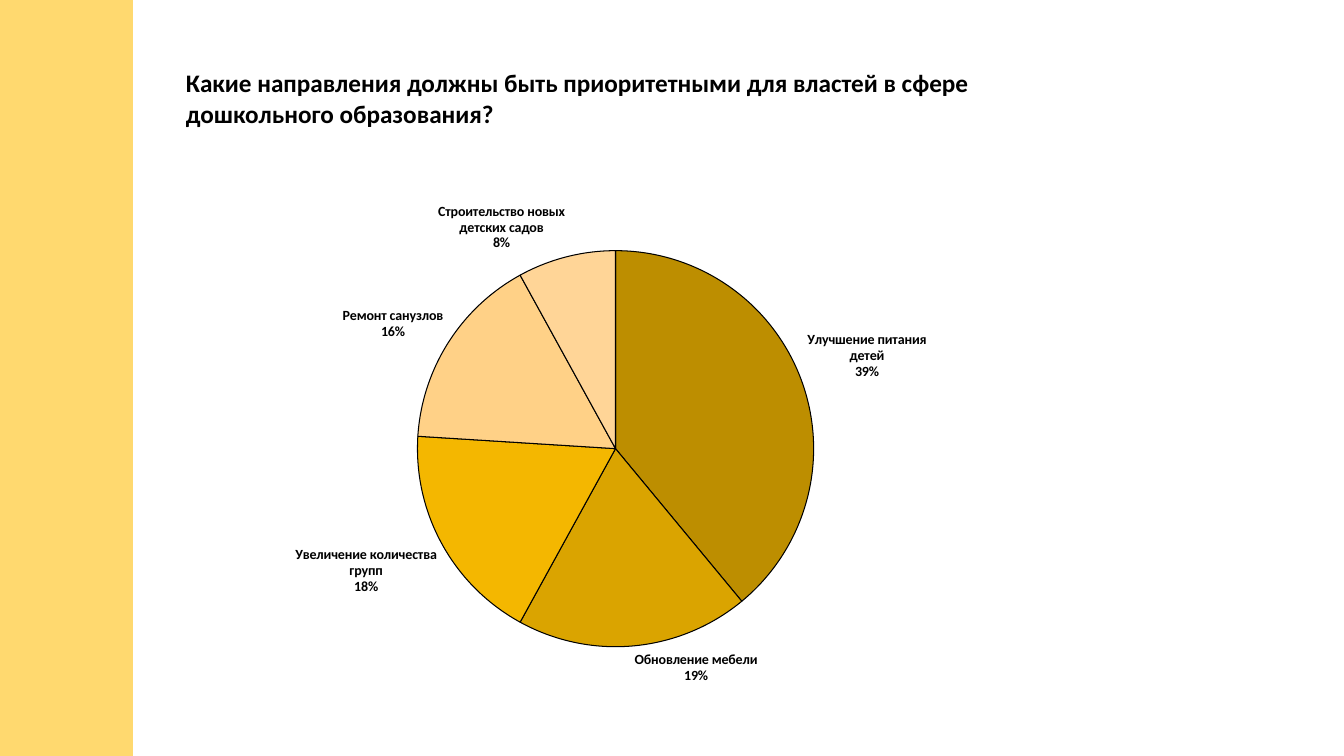
from dataclasses import dataclass

from lxml import etree
from pptx import Presentation
from pptx import util as u
from pptx.chart.data import CategoryChartData
from pptx.dml.color import RGBColor
from pptx.enum import chart as ch, shapes, text
from pptx.oxml import ns

W, H = 13.33, 7.5
FONT = "Calibri"
COLORS = {
    "band": "FFD96F",
    "ink": "000000",
    "food": "BD8E00",
    "furniture": "DAA400",
    "groups": "F4B700",
    "repair": "FFD187",
    "building": "FFD597",
}


@dataclass(frozen=True)
class Box:
    x: float
    y: float
    w: float
    h: float

    def emu(self) -> tuple:
        return (u.Inches(self.x * W), u.Inches(self.y * H),
                u.Inches(self.w * W), u.Inches(self.h * H))


@dataclass(frozen=True)
class Slice:
    label: str
    percent: int
    color: str


BAND = Box(0, 0, 0.099, 1)
TITLE = Box(0.131, 0.083, 0.688, 0.095)
CHART = Box(0.166, 0.247, 0.55, 0.675)
PIE = {"x": 0.263, "y": 0.125, "w": 0.536, "h": 0.777}
SLICES = [
    Slice("Улучшение питания детей", 39, "food"),
    Slice("Обновление мебели", 19, "furniture"),
    Slice("Увеличение количества групп", 18, "groups"),
    Slice("Ремонт санузлов", 16, "repair"),
    Slice("Строительство новых детских садов", 8, "building"),
]


def rgb(name: str) -> RGBColor:
    return RGBColor.from_string(COLORS[name])


def set_font(font, *, size: float, bold: bool = False, color: str = "ink") -> None:
    font.name = FONT
    font.size = u.Pt(size)
    font.bold = bold
    font.color.rgb = rgb(color)


def add_band(s, box: Box, color: str) -> None:
    sp = s.shapes.add_shape(shapes.MSO_SHAPE.RECTANGLE, *box.emu())
    sp.shadow.inherit = False
    sp.fill.solid()
    sp.fill.fore_color.rgb = rgb(color)
    sp.line.fill.background()


def add_text(s, box: Box, content: str, **fmt) -> None:
    tf = s.shapes.add_textbox(*box.emu()).text_frame
    tf.word_wrap = True
    tf.auto_size = text.MSO_AUTO_SIZE.SHAPE_TO_FIT_TEXT
    r = tf.paragraphs[0].add_run()
    r.text = content
    set_font(r.font, **fmt)


def place_plot(chart, area: dict) -> None:
    plot_area = chart.plots[0]._element.getparent()
    for old in plot_area.findall(ns.qn("c:layout")):
        plot_area.remove(old)
    layout = etree.Element(ns.qn("c:layout"))
    manual = etree.SubElement(layout, ns.qn("c:manualLayout"))
    settings = {"layoutTarget": "inner", "xMode": "edge", "yMode": "edge", **area}
    for tag, val in settings.items():
        etree.SubElement(manual, ns.qn(f"c:{tag}")).set("val", str(val))
    plot_area.insert(0, layout)


def add_pie(s, box: Box, slices: list[Slice]) -> None:
    data = CategoryChartData()
    data.categories = [item.label for item in slices]
    data.add_series("Series 1", [item.percent for item in slices])
    chart = s.shapes.add_chart(ch.XL_CHART_TYPE.PIE, *box.emu(), data).chart
    chart.has_legend = False
    chart.has_title = False
    set_font(chart.font, size=10)
    place_plot(chart, PIE)
    plot = chart.plots[0]
    plot.vary_by_categories = True
    series = plot.series[0]
    for i, item in enumerate(slices):
        fmt = series.points[i].format
        fmt.fill.solid()
        fmt.fill.fore_color.rgb = rgb(item.color)
        fmt.line.color.rgb = rgb("ink")
        fmt.line.width = u.Pt(0.75)
    labels = series.data_labels
    labels.show_value = False
    labels.show_category_name = True
    labels.show_percentage = True
    labels.number_format = "0%"
    labels.number_format_is_linked = False
    labels.position = ch.XL_LABEL_POSITION.OUTSIDE_END
    set_font(labels.font, size=10, bold=True)
    separator = etree.Element(ns.qn("c:separator"))
    separator.text = "\n"
    labels._element.find(ns.qn("c:showBubbleSize")).addnext(separator)


def main() -> None:
    prs = Presentation()
    prs.slide_width, prs.slide_height = u.Inches(W), u.Inches(H)
    s = prs.slides.add_slide(prs.slide_layouts[6])
    add_band(s, BAND, "band")
    add_text(s, TITLE, "Какие направления должны быть приоритетными для властей "
             "в сфере дошкольного образования?", size=18, bold=True)
    add_pie(s, CHART, SLICES)
    prs.save("out.pptx")


if __name__ == "__main__":
    main()
